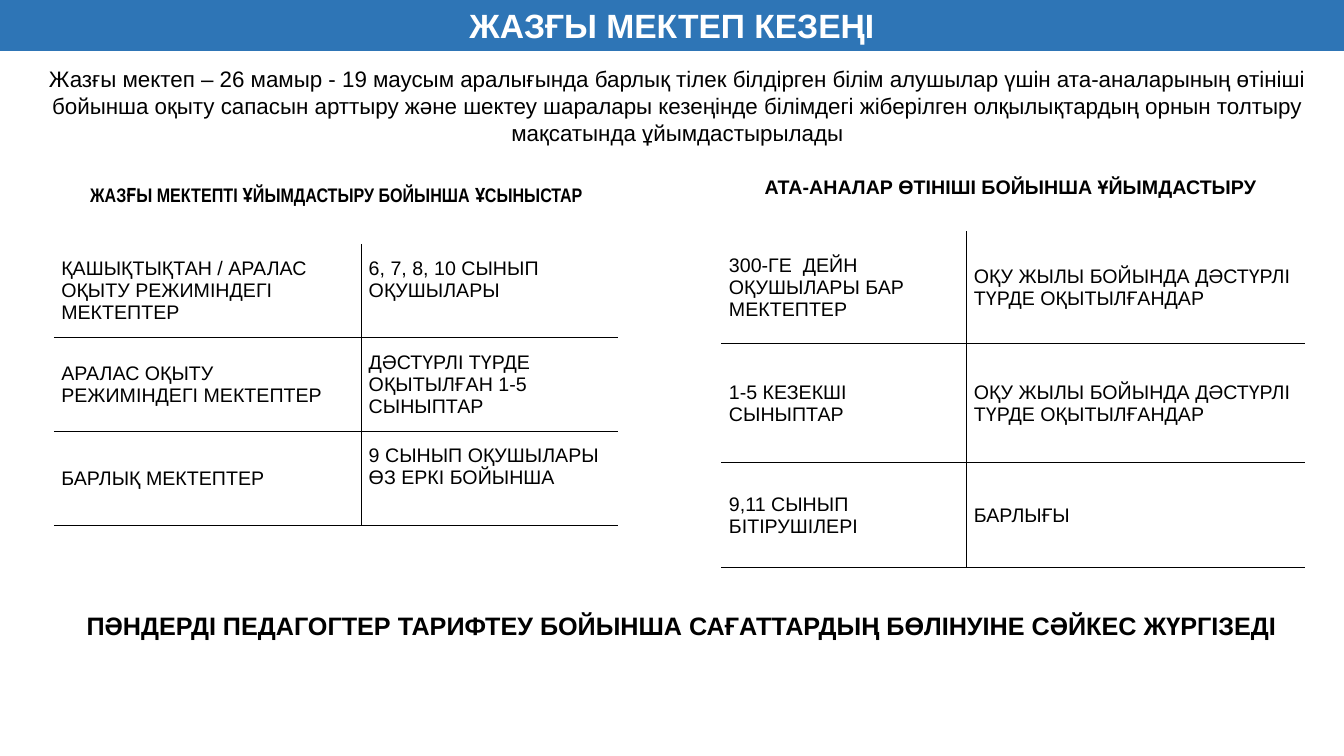
"""Build the summer school slide with two borderless comparison tables."""
from dataclasses import dataclass

import lxml.etree
import pptx
import pptx.dml.color
import pptx.enum.text
import pptx.oxml.ns
import pptx.slide
import pptx.table
import pptx.text.text
import pptx.util

Pt = pptx.util.Pt
Align = pptx.enum.text.PP_ALIGN
Anchor = pptx.enum.text.MSO_ANCHOR


@dataclass(frozen=True)
class Theme:
    bar: str = "2E75B6"
    ink: str = "000000"
    paper: str = "FFFFFF"
    font: str = "Arial"
    narrow_font: str = "Arial Narrow"
    title_size: float = 24
    closing_size: float = 18
    intro_size: float = 16
    body_size: float = 14
    line_width: float = 1
    cell_side: float = 5.4
    cell_edge: float = 2.9


THEME = Theme()


@dataclass(frozen=True)
class Caption:
    text: str
    left: float
    top: float
    width: float
    height: float
    size: float
    bold: bool = True
    font: str = THEME.font
    align: Align = Align.CENTER
    wrap: bool = True


@dataclass(frozen=True)
class Entry:
    school: str
    pupils: str
    lift: float = 0


@dataclass(frozen=True)
class Plan:
    left: float
    top: float
    columns: tuple[float, ...]
    rows: tuple[float, ...]
    entries: tuple[Entry, ...]


TITLE = "ЖАЗҒЫ МЕКТЕП КЕЗЕҢІ"
CAPTIONS = (
    Caption("Жазғы мектеп – 26 мамыр - 19 маусым аралығында барлық тілек білдірген білім алушылар "
            "үшін ата-аналарының өтініші бойынша оқыту сапасын арттыру және шектеу шаралары "
            "кезеңінде білімдегі жіберілген олқылықтардың орнын толтыру мақсатында ұйымдастырылады",
            23.8, 42.5, 920, 65.5, THEME.intro_size, bold=False),
    Caption("ЖАЗҒЫ МЕКТЕПТІ ҰЙЫМДАСТЫРУ БОЙЫНША ҰСЫНЫСТАР",
            54.7, 126.7, 371.5, 24.5, THEME.body_size, font=THEME.narrow_font, wrap=False),
    Caption("АТА-АНАЛАР ӨТІНІШІ БОЙЫНША ҰЙЫМДАСТЫРУ",
            529.2, 121, 385.2, 24, THEME.body_size),
    Caption("ПӘНДЕРДІ ПЕДАГОГТЕР ТАРИФТЕУ БОЙЫНША САҒАТТАРДЫҢ БӨЛІНУІНЕ СӘЙКЕС ЖҮРГІЗЕДІ",
            54.7, 432, 874, 29, THEME.closing_size, align=Align.LEFT, wrap=False),
)
YEAR_ROUND = "ОҚУ ЖЫЛЫ БОЙЫНДА ДӘСТҮРЛІ ТҮРДЕ ОҚЫТЫЛҒАНДАР"
PLANS = (
    Plan(38.4, 174.2, (219.6, 183.6), (67,) * 3, (
        Entry("ҚАШЫҚТЫҚТАН / АРАЛАС ОҚЫТУ РЕЖИМІНДЕГІ МЕКТЕПТЕР",
              "6, 7, 8, 10 СЫНЫП ОҚУШЫЛАРЫ", lift=16),
        Entry("АРАЛАС ОҚЫТУ РЕЖИМІНДЕГІ МЕКТЕПТЕР", "ДӘСТҮРЛІ ТҮРДЕ ОҚЫТЫЛҒАН 1-5 СЫНЫПТАР"),
        Entry("БАРЛЫҚ МЕКТЕПТЕР", "9 СЫНЫП ОҚУШЫЛАРЫ ӨЗ ЕРКІ БОЙЫНША", lift=16),
    )),
    Plan(515.3, 165, (175, 242), (80.6, 85, 74.9), (
        Entry("300-ГЕ  ДЕЙН ОҚУШЫЛАРЫ БАР МЕКТЕПТЕР", YEAR_ROUND),
        Entry("1-5 КЕЗЕКШІ СЫНЫПТАР", YEAR_ROUND),
        Entry("9,11 СЫНЫП БІТІРУШІЛЕРІ", "БАРЛЫҒЫ"),
    )),
)


def style_paragraph(para: pptx.text.text._Paragraph, size: float, color: str, bold: bool,
                    align: Align = Align.LEFT, font: str = THEME.font) -> None:
    para.alignment = align
    para.font.name = font
    para.font.size = Pt(size)
    para.font.bold = bold
    para.font.color.rgb = pptx.dml.color.RGBColor.from_string(color)


def draw_title(page: pptx.slide.Slide, width: float) -> None:
    title = page.shapes.title
    title.left, title.top, title.width, title.height = Pt(0), Pt(0), Pt(width), Pt(36.4)
    title.fill.solid()
    title.fill.fore_color.rgb = pptx.dml.color.RGBColor.from_string(THEME.bar)
    frame = title.text_frame
    frame.text = TITLE
    frame.auto_size = pptx.enum.text.MSO_AUTO_SIZE.NONE
    frame.vertical_anchor = Anchor.MIDDLE
    style_paragraph(frame.paragraphs[0], THEME.title_size, THEME.paper, True, Align.CENTER)


def draw_caption(page: pptx.slide.Slide, caption: Caption) -> None:
    box = page.shapes.add_textbox(Pt(caption.left), Pt(caption.top),
                                  Pt(caption.width), Pt(caption.height))
    frame = box.text_frame
    frame.word_wrap = caption.wrap
    frame.vertical_anchor = Anchor.MIDDLE
    frame.text = caption.text
    style_paragraph(frame.paragraphs[0], caption.size, THEME.ink, caption.bold,
                    caption.align, caption.font)


def set_borders(cell: pptx.table._Cell, visible: set[str]) -> None:
    properties = cell._tc.get_or_add_tcPr()
    qn = pptx.oxml.ns.qn
    for index, side in enumerate("LRTB"):
        line = lxml.etree.Element(qn(f"a:ln{side}"), w=str(Pt(THEME.line_width)))
        if side in visible:
            fill = lxml.etree.SubElement(line, qn("a:solidFill"))
            lxml.etree.SubElement(fill, qn("a:srgbClr"), val=THEME.ink)
        else:
            lxml.etree.SubElement(line, qn("a:noFill"))
        properties.insert(index, line)


def fill_cell(cell: pptx.table._Cell, text: str, lift: float) -> None:
    cell.text = text
    cell.fill.background()
    cell.vertical_anchor = Anchor.MIDDLE
    cell.margin_left = cell.margin_right = Pt(THEME.cell_side)
    cell.margin_top = Pt(THEME.cell_edge)
    cell.margin_bottom = Pt(THEME.cell_edge + lift)
    style_paragraph(cell.text_frame.paragraphs[0], THEME.body_size, THEME.ink, False)


def draw_plan(page: pptx.slide.Slide, plan: Plan) -> None:
    table = page.shapes.add_table(len(plan.rows), len(plan.columns), Pt(plan.left), Pt(plan.top),
                                  Pt(sum(plan.columns)), Pt(sum(plan.rows))).table
    table.first_row = table.horz_banding = False
    for column, width in zip(table.columns, plan.columns):
        column.width = Pt(width)
    for index, (entry, height) in enumerate(zip(plan.entries, plan.rows)):
        table.rows[index].height = Pt(height)
        school, pupils = table.cell(index, 0), table.cell(index, 1)
        fill_cell(school, entry.school, 0)
        fill_cell(pupils, entry.pupils, entry.lift)
        shared = {"B", "T"} if index else {"B"}
        set_borders(school, shared | {"R"})
        set_borders(pupils, shared | {"L"})


def main() -> None:
    deck = pptx.Presentation()
    deck.slide_width, deck.slide_height = Pt(960), Pt(540)
    page = deck.slides.add_slide(deck.slide_layouts.get_by_name("Title Only"))
    draw_title(page, 960)
    for caption in CAPTIONS:
        draw_caption(page, caption)
    for plan in PLANS:
        draw_plan(page, plan)
    deck.save("out.pptx")


if __name__ == "__main__":
    main()
